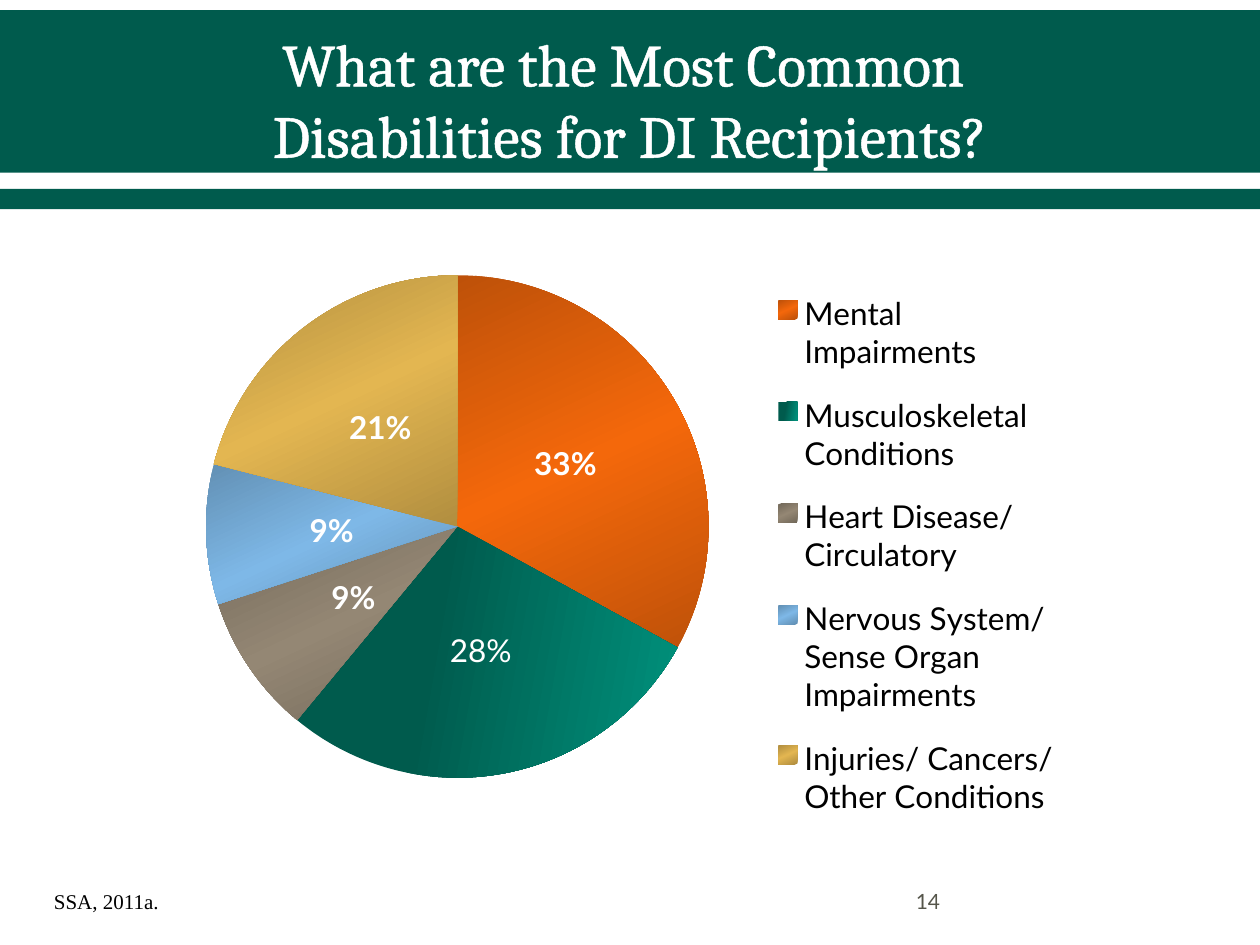
import dataclasses

import lxml.etree
import pptx
import pptx.chart.data
import pptx.dml.color
import pptx.enum.chart
import pptx.enum.shapes
import pptx.enum.text
import pptx.oxml
import pptx.oxml.ns
import pptx.util
from pptx.util import Inches

qn = pptx.oxml.ns.qn


@dataclasses.dataclass(frozen=True)
class Theme:
    """Colours, fonts and type sizes of the slide."""
    green: str = "005B4D"
    light_green: str = "00927D"
    white: str = "FFFFFF"
    black: str = "000000"
    muted: str = "55554A"
    orange: str = "F4680B"
    taupe: str = "948774"
    blue: str = "7EB8E7"
    gold: str = "E3B651"
    heading: str = "Cambria"
    body: str = "Lato"
    source: str = "Times New Roman"
    title_size: int = 34
    chart_size: int = 18
    small_size: int = 12


THEME = Theme()


def rgb(color):
    """Turn a hex string into a colour."""
    return pptx.dml.color.RGBColor.from_string(color)


def set_font(font, name, size, color, bold=None):
    """Set the face, size, colour and weight of a font."""
    font.name, font.size, font.bold = name, pptx.util.Pt(size), bold
    font.color.rgb = rgb(color)


def add_band(s, top, height):
    """Add a full-width green band."""
    sp = s.shapes.add_shape(pptx.enum.shapes.MSO_SHAPE.RECTANGLE,
                            0, Inches(top), Inches(10), Inches(height))
    sp.shadow.inherit = False
    sp.fill.solid()
    sp.fill.fore_color.rgb = rgb(THEME.green)
    sp.line.fill.background()


def add_text(s, box, text, name, size, color, wrap=True, anchor="TOP", align="LEFT"):
    """Add a one-paragraph text box and return its paragraph."""
    tf = s.shapes.add_textbox(*map(Inches, box)).text_frame
    tf.word_wrap = wrap
    tf.vertical_anchor = pptx.enum.text.MSO_ANCHOR[anchor]
    p = tf.paragraphs[0]
    p.text = text
    p.alignment = pptx.enum.text.PP_ALIGN[align]
    set_font(p.font, name, size, color)
    return p


def outline_text(p, color, width):
    """Draw an outline around the letters of a paragraph."""
    for r in p.runs:
        ln = lxml.etree.Element(qn("a:ln"), w=str(pptx.util.Pt(width)))
        fill = lxml.etree.SubElement(ln, qn("a:solidFill"))
        lxml.etree.SubElement(fill, qn("a:srgbClr"), val=color)
        r.font._element.insert(0, ln)


def shade(color, factor=0.78):
    """Darken a hex colour."""
    return "".join(f"{round(int(color[i:i + 2], 16) * factor):02X}" for i in (0, 2, 4))


def fill_gradient(fill, stops, angle):
    """Fill with a linear gradient, its angle clockwise in degrees."""
    fill.gradient()
    fill.gradient_angle = 360 - angle
    gs_list = fill.gradient_stops[0]._gs.getparent()
    for gs in list(gs_list):
        gs_list.remove(gs)
    for position, color in stops:
        gs = lxml.etree.SubElement(gs_list, qn("a:gs"), pos=str(position * 1000))
        lxml.etree.SubElement(gs, qn("a:srgbClr"), val=color)


def set_layout(element, before, x, y, w, h, inner=False):
    """Place a chart part by fractions of the chart area."""
    for old in element.findall(qn("c:layout")):
        element.remove(old)
    layout = lxml.etree.Element(qn("c:layout"))
    manual = lxml.etree.SubElement(layout, qn("c:manualLayout"))
    values = [("layoutTarget", "inner")] if inner else []
    values += [("xMode", "edge"), ("yMode", "edge"), ("x", x), ("y", y), ("w", w), ("h", h)]
    for tag, value in values:
        lxml.etree.SubElement(manual, qn(f"c:{tag}"), val=str(value))
    element.find(qn(before)).addprevious(layout)


def add_pie(s, box, shares):
    """Add the pie of shares with percent labels and a legend."""
    data = pptx.chart.data.CategoryChartData(number_format="General")
    data.categories = [name for name, _, _ in shares]
    data.add_series("Series 1", [value for _, value, _ in shares])
    chart = s.shapes.add_chart(pptx.enum.chart.XL_CHART_TYPE.PIE,
                               *map(Inches, box), data).chart
    set_font(chart.font, THEME.body, THEME.chart_size, THEME.black)
    chart.has_title = False
    chart.has_legend = True
    chart.legend.position = pptx.enum.chart.XL_LEGEND_POSITION.RIGHT
    chart.legend.include_in_layout = False
    set_font(chart.legend.font, THEME.body, THEME.chart_size, THEME.black)
    plot = chart.plots[0]
    plot.vary_by_categories = True
    series = plot.series[0]
    for i, (_, _, color) in enumerate(shares):
        if color == THEME.green:
            stops, angle = [(0, color), (36, color), (100, THEME.light_green)], 10
        else:
            stops, angle = [(0, shade(color)), (50, color), (100, shade(color))], 65
        fill_gradient(series.points[i].format.fill, stops, angle)
    center = pptx.enum.chart.XL_LABEL_POSITION.CENTER
    labels = series.data_labels
    labels.show_percentage, labels.show_value = True, False
    labels.number_format, labels.number_format_is_linked = "0%", False
    labels.position = center
    set_font(labels.font, THEME.body, THEME.chart_size, THEME.white, True)
    label = series.points[1].data_label
    p = label.text_frame.paragraphs[0]
    p.text = "28%"
    set_font(p.runs[0].font, THEME.body, THEME.chart_size, THEME.white, False)
    label.position = center
    set_layout(plot._element.getparent(), "c:pieChart", 0.07, 0.12, 0.54, 0.72, True)
    set_layout(chart.legend._element, "c:overlay", 0.67, 0.11, 0.31, 0.82)


def main():
    """Build the slide and save it."""
    prs = pptx.Presentation()
    prs.slide_width, prs.slide_height = Inches(10), Inches(7.5)
    s = prs.slides.add_slide(prs.slide_layouts[6])
    for top, height in ((0.08, 1.29), (1.5, 0.16)):
        add_band(s, top, height)
    title = add_text(s, (0.5, 0.17, 9, 1.22),
                     "What are the Most Common \vDisabilities for DI Recipients?",
                     THEME.heading, THEME.title_size, THEME.white,
                     anchor="MIDDLE", align="CENTER")
    outline_text(title, THEME.white, 1.1)
    add_pie(s, (1.08, 1.52, 7.5, 5.54), (
        ("Mental Impairments", 33, THEME.orange),
        ("Musculoskeletal Conditions", 28, THEME.green),
        ("Heart Disease/ Circulatory ", 9, THEME.taupe),
        ("Nervous System/ Sense Organ Impairments", 9, THEME.blue),
        ("Injuries/ Cancers/ Other Conditions", 21, THEME.gold),
    ))
    add_text(s, (0.33, 7, 1.04, 0.3), "SSA, 2011a.",
             THEME.source, THEME.small_size, THEME.black, wrap=False)
    add_text(s, (7.17, 6.95, 2.33, 0.4), "14",
             THEME.body, THEME.small_size, THEME.muted, anchor="MIDDLE")
    prs.save("out.pptx")


if __name__ == "__main__":
    main()
